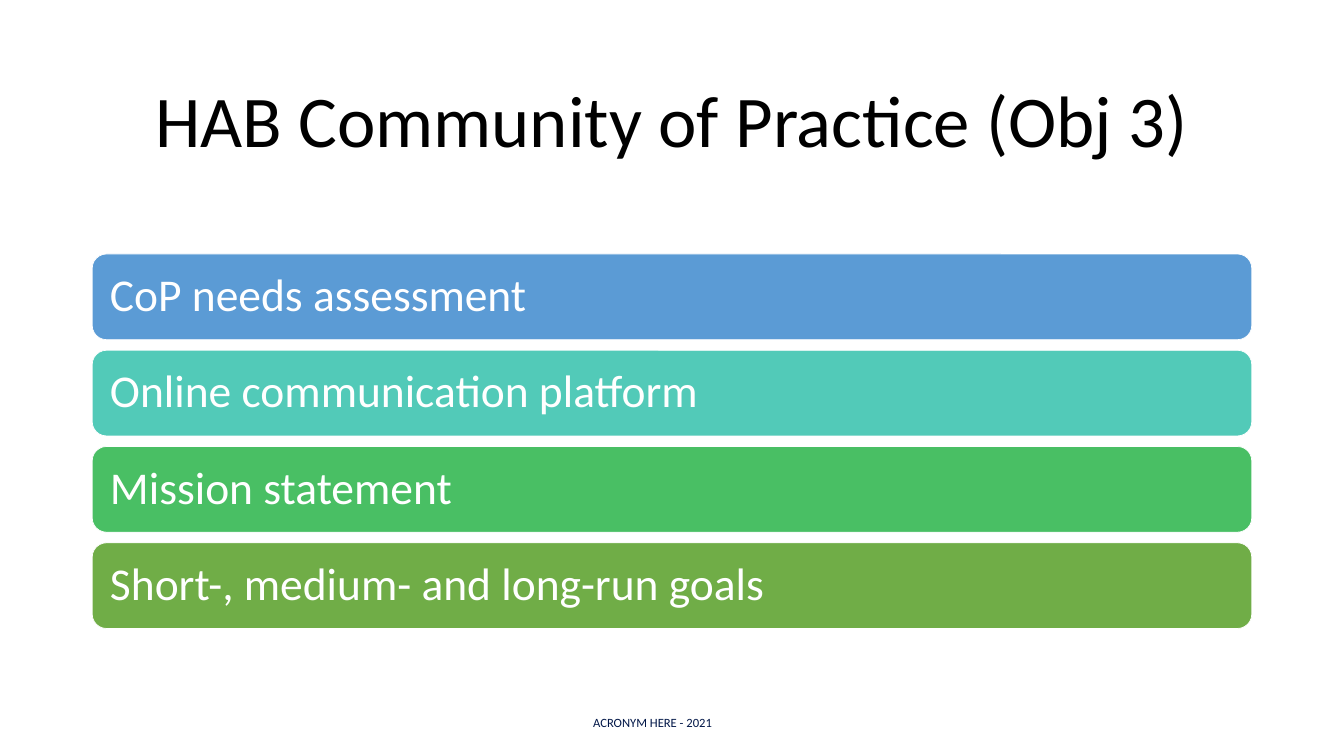
from pptx import Presentation
from pptx.dml.color import RGBColor
from pptx.enum.shapes import MSO_SHAPE
from pptx.enum.text import MSO_ANCHOR, PP_ALIGN
from pptx.util import Inches, Pt

WIDTH, HEIGHT = 26.67, 15
MARGIN = 1.83
FONT = "Calibri"
COLORS = {
    "text": "000000", "white": "FFFFFF", "footer": "021748",
    "blue": "5B9BD5", "teal": "52CAB8", "green": "49BF64", "olive": "70AD47",
}
GOALS = [
    ("CoP needs assessment", "blue"),
    ("Online communication platform", "teal"),
    ("Mission statement", "green"),
    ("Short-, medium- and long-run goals", "olive"),
]


def rgb(name):
    return RGBColor.from_string(COLORS[name])


def set_text(shape, text, size, color, inset, align=PP_ALIGN.LEFT, spacing=1.0):
    tf = shape.text_frame
    tf.text = text
    tf.word_wrap = True
    tf.vertical_anchor = MSO_ANCHOR.MIDDLE
    tf.margin_left = tf.margin_right = Inches(inset)
    tf.margin_top = tf.margin_bottom = Inches(inset)
    p = tf.paragraphs[0]
    p.alignment, p.line_spacing = align, spacing
    font = p.runs[0].font
    font.name, font.size = FONT, Pt(size)
    font.color.rgb = rgb(color)


def add_title(slide, box):
    title = slide.shapes.add_textbox(*map(Inches, box))
    set_text(title, "HAB Community of Practice (Obj 3)", 104, "text", 0.1,
             PP_ALIGN.CENTER, 0.9)


def add_goal_bars(slide, box, gap):
    """Stack one rounded bar per goal, filling the height of the box."""
    left, top, width, height = box
    bar_height = (height - gap * (len(GOALS) - 1)) / len(GOALS)
    for row, (text, color) in enumerate(GOALS):
        y = top + row * (bar_height + gap)
        bar = slide.shapes.add_shape(
            MSO_SHAPE.ROUNDED_RECTANGLE,
            *map(Inches, (left, y, width, bar_height)))
        bar.shadow.inherit = False
        bar.fill.solid()
        bar.fill.fore_color.rgb = rgb(color)
        bar.line.color.rgb = rgb("white")
        bar.line.width = Pt(1)
        set_text(bar, text, 65, "white", 0.27, spacing=0.9)


def add_footer(slide, box):
    footer = slide.shapes.add_textbox(*map(Inches, box))
    set_text(footer, "ACRONYM HERE - 2021", 18, "footer", 0.06)


def main():
    prs = Presentation()
    prs.slide_width, prs.slide_height = Inches(WIDTH), Inches(HEIGHT)
    slide = prs.slides.add_slide(prs.slide_layouts[6])
    content_width = WIDTH - 2 * MARGIN

    # Title, goal bars, footer
    add_title(slide, (MARGIN, 1.22, content_width, 2.48))
    add_goal_bars(slide, (MARGIN, 5.04, content_width, 7.43), gap=0.21)
    add_footer(slide, (11.71, 14.03, 3.25, 0.6))

    prs.save("out.pptx")


if __name__ == "__main__":
    main()
